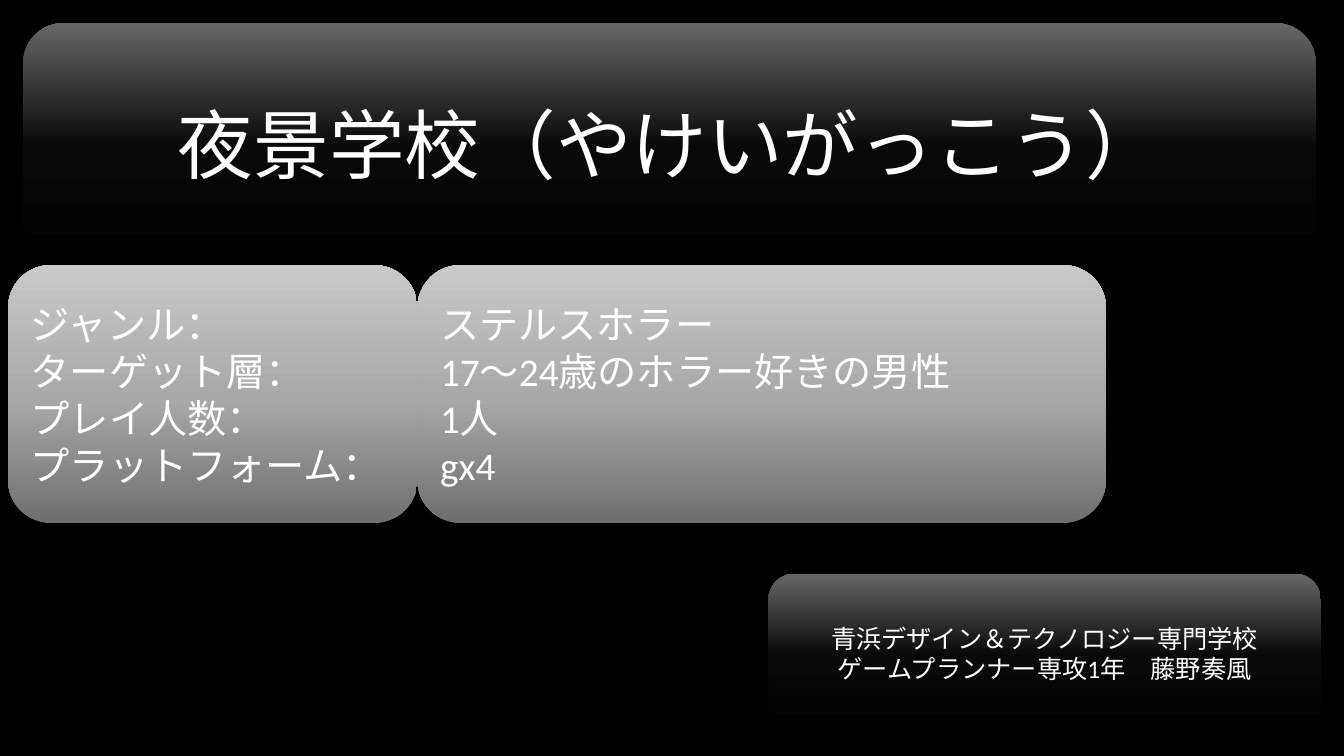
from lxml.etree import SubElement
from pptx import Presentation
from pptx.dml.color import RGBColor
from pptx.enum.shapes import MSO_SHAPE as Shape
from pptx.enum.text import MSO_ANCHOR as Anchor, MSO_AUTO_SIZE as AutoSize, PP_ALIGN as Align
from pptx.oxml.ns import qn
from pptx.util import Inches, Pt

COLORS = {
    "background": "000000", "text": "FFFFFF",
    "dark_low": "000000", "dark_middle": "080808", "dark_high": "666666",
    "gray_low": "6F6F6F", "gray_middle": "A8A8A8", "gray_high": "C9C9C9",
}
FONT = "Calibri"
WIDTH, HEIGHT = 13.33, 7.5
CORNER_SHARE = 0.1667
INSET_SHARE = CORNER_SHARE * 0.293

TITLE = "夜景学校（やけいがっこう）"
DETAILS = [
    ("ジャンル：", "ステルスホラー"),
    ("ターゲット層：", "17～24歳のホラー好きの男性"),
    ("プレイ人数：", "1人"),
    ("プラットフォーム：", "gx4"),
]
CREDITS = ["青浜デザイン＆テクノロジー専門学校", "ゲームプランナー専攻1年\u3000藤野奏風".replace("\u3000", "　")]


def place(shape, box):
    """Move a shape to a box of left, top, width and height in inches."""
    shape.left, shape.top, shape.width, shape.height = map(Inches, box)


def add_panel(slide, box, tone):
    """Add a rounded panel shaded upwards from low to high tone."""
    panel = slide.shapes.add_shape(Shape.ROUNDED_RECTANGLE, *map(Inches, box))
    panel.shadow.inherit = False
    panel.line.fill.background()
    panel.fill.gradient()
    panel.fill.gradient_angle = 90
    stops = panel._element.spPr.find(qn("a:gradFill")).find(qn("a:gsLst"))
    for stop in list(stops):
        stops.remove(stop)
    for position, level in ((0, "low"), (48, "middle"), (100, "high")):
        stop = SubElement(stops, qn("a:gs"), pos=str(position * 1000))
        SubElement(stop, qn("a:srgbClr"), val=COLORS[f"{tone}_{level}"])
    return panel


def write_lines(shape, lines, size, alignment, inset=0.1):
    """Write one unbulleted paragraph per line, centred vertically."""
    frame = shape.text_frame
    frame.word_wrap = True
    frame.auto_size = AutoSize.NONE
    frame.vertical_anchor = Anchor.MIDDLE
    frame.margin_left = frame.margin_right = Inches(inset)
    for index, line in enumerate(lines):
        paragraph = frame.add_paragraph() if index else frame.paragraphs[0]
        paragraph.alignment = alignment
        paragraph.space_before = Pt(0)
        properties = paragraph._p.get_or_add_pPr()
        properties.set("marL", "0")
        properties.set("indent", "0")
        SubElement(properties, qn("a:buNone"))
        run = paragraph.add_run()
        run.text = line
        run.font.name = FONT
        run.font.size = Pt(size)
        run.font.color.rgb = RGBColor.from_string(COLORS["text"])


def fill_placeholder(slide, placeholder, box, tone, lines, size, alignment):
    """Lay a placeholder over a panel that fills the same box."""
    panel = add_panel(slide, box, tone)
    placeholder._element.addprevious(panel._element)
    place(placeholder, box)
    write_lines(placeholder, lines, size, alignment, 0.1 + box[3] * INSET_SHARE)


def add_details(slide, placeholders, box, label_width):
    """Set labels and values side by side in the box."""
    left, top, width, height = box
    labels, values = zip(*DETAILS)
    label_box = (left, top, label_width, height)
    value_box = (left + label_width, top, width - label_width, height)
    fill_placeholder(slide, placeholders[0], label_box, "gray", labels, 28, Align.JUSTIFY)
    fill_placeholder(slide, placeholders[1], value_box, "gray", values, 28, Align.LEFT)


def add_credits(slide, box):
    """Add the panel that names the school and the author."""
    write_lines(add_panel(slide, box, "dark"), CREDITS, 18, Align.CENTER)


def build_cover(presentation):
    """Build the cover with its title, game details and credits."""
    slide = presentation.slides.add_slide(presentation.slide_layouts[3])
    background = slide.background.fill
    background.solid()
    background.fore_color.rgb = RGBColor.from_string(COLORS["background"])
    title, *details = slide.placeholders
    margin = 0.23
    fill_placeholder(slide, title, (margin, margin, WIDTH - 2 * margin - 0.05, 2.38),
                     "dark", [TITLE], 54, Align.CENTER)
    add_details(slide, details, (0.08, 2.63, 10.89, 2.56), 4.06)
    add_credits(slide, (WIDTH - margin - 5.48, HEIGHT - margin - 1.58, 5.48, 1.58))


def main():
    """Create and save the presentation."""
    presentation = Presentation()
    presentation.slide_width, presentation.slide_height = Inches(WIDTH), Inches(HEIGHT)
    build_cover(presentation)
    presentation.save("out.pptx")


if __name__ == "__main__":
    main()
